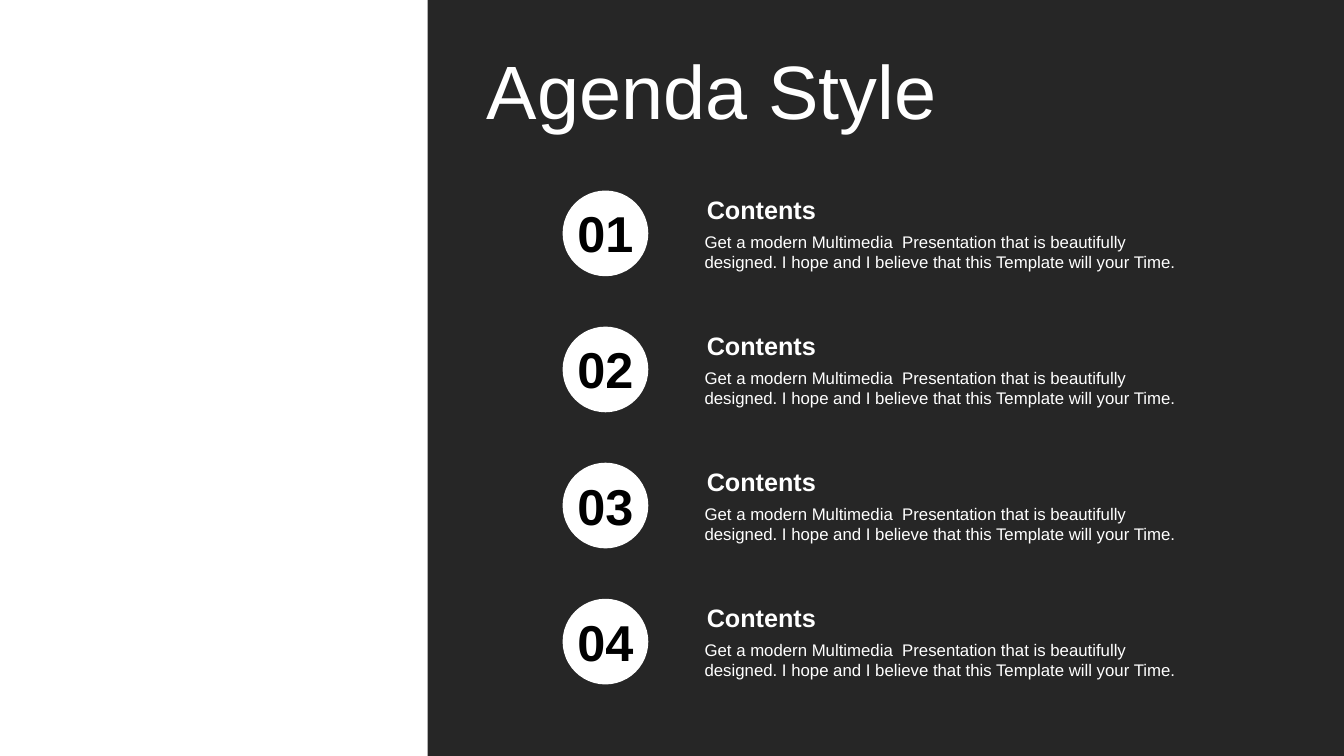
"""Build an agenda slide with four numbered items on a dark panel."""
from dataclasses import dataclass

from pptx import Presentation
from pptx.dml.color import RGBColor
from pptx.enum.shapes import MSO_SHAPE
from pptx.enum.text import MSO_ANCHOR, MSO_AUTO_SIZE, PP_ALIGN
from pptx.util import Inches, Pt

TITLE = "Agenda Style"
DESCRIPTION = (
    "Get a modern Multimedia  Presentation that is beautifully designed. "
    "I hope and I believe that this Template will your Time."
)
AGENDA = [
    ("01", "Contents", DESCRIPTION),
    ("02", "Contents", DESCRIPTION),
    ("03", "Contents", DESCRIPTION),
    ("04", "Contents", DESCRIPTION),
]


@dataclass(frozen=True)
class Theme:
    """Colours, font and type sizes."""
    panel: RGBColor = RGBColor(0x26, 0x26, 0x26)
    light: RGBColor = RGBColor(0xFF, 0xFF, 0xFF)
    dark: RGBColor = RGBColor(0x00, 0x00, 0x00)
    font: str = "Arial"
    title: int = 54
    number: int = 36
    heading: int = 18
    body: int = 12


THEME = Theme()
SLIDE_WIDTH, SLIDE_HEIGHT = 13.33, 7.5
PANEL_LEFT = 4.24
FIRST_ROW_TOP, ROW_STEP = 1.88, 1.35
TEXT_LEFT, TEXT_WIDTH = 6.89, 4.93
CIRCLE_LEFT, CIRCLE_SIZE = 5.58, 0.85
NUMBER_WIDTH = 1.05
WIDE_INSET, NORMAL_INSET = 0.12, 0.1


def add_filled_shape(shapes, kind, box, color):
    shape = shapes.add_shape(kind, *map(Inches, box))
    shape.shadow.inherit = False
    shape.fill.solid()
    shape.fill.fore_color.rgb = color
    shape.line.fill.background()


def add_text(shapes, text, box, size, color=THEME.light, bold=False,
             inset=NORMAL_INSET, align=PP_ALIGN.LEFT, anchor=MSO_ANCHOR.TOP):
    text_frame = shapes.add_textbox(*map(Inches, box)).text_frame
    text_frame.word_wrap = True
    text_frame.auto_size = MSO_AUTO_SIZE.SHAPE_TO_FIT_TEXT
    text_frame.margin_left = text_frame.margin_right = Inches(inset)
    text_frame.vertical_anchor = anchor
    text_frame.text = text
    paragraph = text_frame.paragraphs[0]
    paragraph.alignment = align
    font = paragraph.runs[0].font
    font.name, font.size, font.bold = THEME.font, Pt(size), bold
    font.color.rgb = color


def add_agenda_item(slide, top, number, heading, description):
    shapes = slide.shapes.add_group_shape().shapes
    add_text(shapes, description, (TEXT_LEFT, top + 0.37, TEXT_WIDTH, 0.5), THEME.body)
    add_text(shapes, heading, (TEXT_LEFT, top, TEXT_WIDTH, 0.4), THEME.heading,
             bold=True, inset=WIDE_INSET)
    add_filled_shape(shapes, MSO_SHAPE.OVAL,
                     (CIRCLE_LEFT, top + 0.01, CIRCLE_SIZE, CIRCLE_SIZE), THEME.light)
    number_left = CIRCLE_LEFT + (CIRCLE_SIZE - NUMBER_WIDTH) / 2
    add_text(shapes, number, (number_left, top + 0.08, NUMBER_WIDTH, 0.71), THEME.number,
             color=THEME.dark, bold=True, inset=WIDE_INSET, align=PP_ALIGN.CENTER)


def main():
    presentation = Presentation()
    presentation.slide_width = Inches(SLIDE_WIDTH)
    presentation.slide_height = Inches(SLIDE_HEIGHT)
    slide = presentation.slides.add_slide(presentation.slide_layouts[6])
    add_filled_shape(slide.shapes, MSO_SHAPE.RECTANGLE,
                     (PANEL_LEFT, 0, SLIDE_WIDTH - PANEL_LEFT, SLIDE_HEIGHT), THEME.panel)
    add_text(slide.shapes, TITLE, (4.73, 0.38, 8.6, 1.01), THEME.title,
             anchor=MSO_ANCHOR.MIDDLE)
    for row, item in enumerate(AGENDA):
        add_agenda_item(slide, FIRST_ROW_TOP + row * ROW_STEP, *item)
    presentation.save("out.pptx")


if __name__ == "__main__":
    main()
